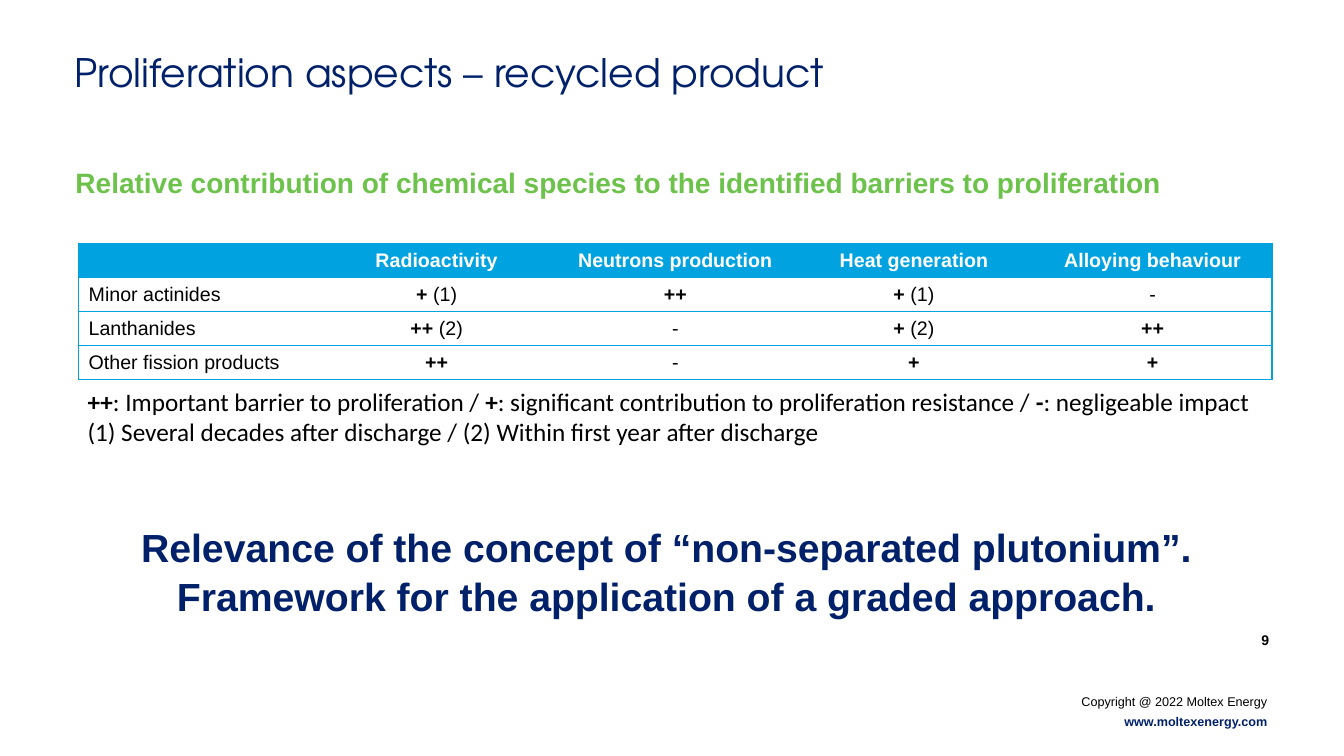
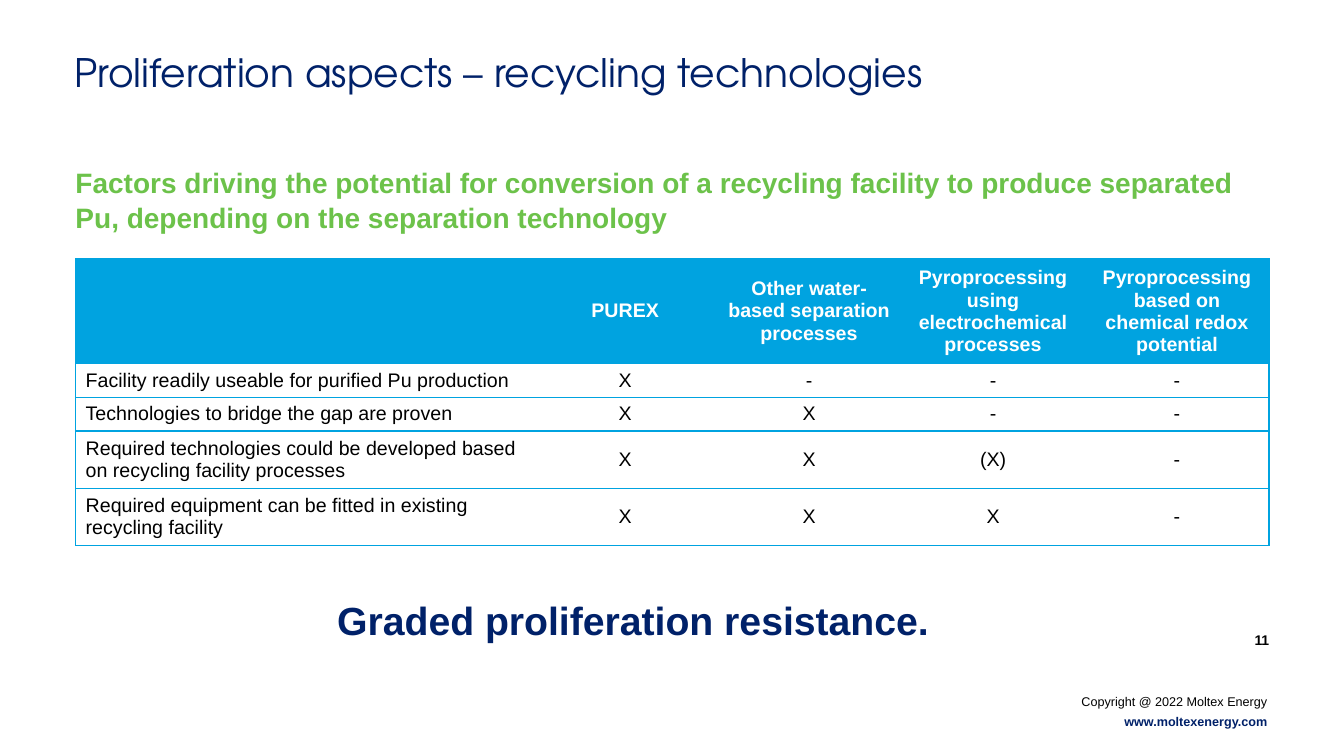
"""Two slides on proliferation aspects of recycled nuclear fuel."""
from dataclasses import dataclass
from typing import NamedTuple

from lxml import etree
from pptx import Presentation, util as u
from pptx.dml.color import RGBColor
from pptx.enum import text as t
from pptx.oxml import ns

COLOURS = {"navy": "002169", "green": "6CC24A", "sky": "00A3E0",
           "black": "000000", "white": "FFFFFF"}
WIDTH, HEIGHT = u.Inches(13.333), u.Inches(7.5)
COLUMNS, ROWS = 160, 90
NO_GRID = "{2D5ABB26-0587-4C30-8999-92F81FD0307C}"
LEFT, CENTRE, RIGHT = t.PP_ALIGN.LEFT, t.PP_ALIGN.CENTER, t.PP_ALIGN.RIGHT


class Box(NamedTuple):
    """Place on the slide in grid columns and rows."""
    left: float
    top: float
    width: float
    height: float


@dataclass(frozen=True)
class Style:
    """Look of a paragraph."""
    size: float
    colour: str = "black"
    bold: bool = False
    align: t.PP_ALIGN = LEFT
    face: str = "Arial"
    leading: float | u.Pt | None = None


@dataclass(frozen=True)
class Matrix:
    """Comparison table whose first row is the header."""
    left: float
    top: float
    columns: list[float]
    rows: list[float]
    cells: list[list[str]]


@dataclass(frozen=True)
class Page:
    """Content of one slide."""
    number: int
    title: str
    subtitle: str
    subtitle_box: Box
    matrix: Matrix
    conclusion: str
    conclusion_box: Box
    legend: tuple[str, ...] = ()


TITLE = Style(28, "navy", face="TeX Gyre Adventor")
SUBTITLE = Style(20, "green", True, leading=1.06)
CONCLUSION = Style(28, "navy", True, CENTRE, leading=1.06)
LEGEND = Style(18, face="Calibri")
NUMBER = Style(10, bold=True, align=RIGHT)
COPYRIGHT = Style(9, align=RIGHT, leading=u.Pt(14))
WEBSITE = Style(9, "navy", True, RIGHT, leading=u.Pt(14))
HEADER = Style(14, "white", True, CENTRE)
FACTOR = Style(14)
RATING = Style(14, align=CENTRE)

TITLE_BOX = Box(7.68, 5.16, 111.12, 6.84)
NUMBER_BOX = Box(116.28, 74.64, 36, 4.8)
FOOTER_BOX = Box(126.48, 81.48, 25.56, 5.64)
LEGEND_BOX = Box(9.24, 45.36, 143.28, 12.12)
TABLE_WIDTH = 142.08
FACTOR_WIDTH = 54.48

PAGES = [
    Page(
        9, "Proliferation aspects – recycled product",
        "Relative contribution of chemical species to the identified barriers to proliferation",
        Box(7.8, 18.84, 143.16, 5.28),
        Matrix(9.36, 29.04, [TABLE_WIDTH / 5] * 5, [4.03] * 4, [
            ["", "Radioactivity", "Neutrons production", "Heat generation", "Alloying behaviour"],
            ["Minor actinides", "*+* (1)", "*++*", "*+* (1)", "-"],
            ["Lanthanides", "*++* (2)", "-", "*+* (2)", "*++*"],
            ["Other fission products", "*++*", "-", "*+*", "*+*"],
        ]),
        "Relevance of the concept of “non-separated plutonium”. "
        "Framework for the application of a graded approach.",
        Box(8.28, 61.32, TABLE_WIDTH, 12.48),
        ("*++*: Important barrier to proliferation / *+*: significant contribution to "
         "proliferation resistance / *-*: negligeable impact",
         "(1) Several decades after discharge / (2) Within first year after discharge"),
    ),
    Page(
        11, "Proliferation aspects – recycling technologies",
        "Factors driving the potential for conversion of a recycling facility to produce "
        "separated Pu, depending on the separation technology",
        Box(7.8, 18.84, 141.24, 9.24),
        Matrix(9, 30.84, [FACTOR_WIDTH] + [(TABLE_WIDTH - FACTOR_WIDTH) / 4] * 4,
               [12.35, 4.03, 4.03, 6.84, 6.84], [
            ["", "PUREX", "Other water-based separation processes",
             "Pyroprocessing using electrochemical processes",
             "Pyroprocessing based on chemical redox potential"],
            ["Facility readily useable for purified Pu production", "X", "-", "-", "-"],
            ["Technologies to bridge the gap are proven", "X", "X", "-", "-"],
            ["Required technologies could be developed based on recycling facility processes",
             "X", "X", "(X)", "-"],
            ["Required equipment can be fitted in existing recycling facility",
             "X", "X", "X", "-"],
        ]),
        "Graded proliferation resistance.",
        Box(4.32, 70.08, TABLE_WIDTH, 6.84),
    ),
]


def across(columns: float) -> int:
    """Turn grid columns into a length."""
    return round(WIDTH * columns / COLUMNS)


def down(rows: float) -> int:
    """Turn grid rows into a length."""
    return round(HEIGHT * rows / ROWS)


def place(box: Box) -> tuple[int, int, int, int]:
    """Turn a grid box into slide lengths."""
    return across(box.left), down(box.top), across(box.width), down(box.height)


def colour(name: str) -> RGBColor:
    """Look up a named colour."""
    return RGBColor.from_string(COLOURS[name])


def write(paragraph, wording: str, style: Style) -> None:
    """Write a paragraph, with bold parts between asterisks."""
    paragraph.alignment = style.align
    if style.leading:
        paragraph.line_spacing = style.leading
    font = paragraph.font
    font.size, font.name, font.bold = u.Pt(style.size), style.face, style.bold
    font.color.rgb = colour(style.colour)
    for index, part in enumerate(wording.split("*")):
        if part:
            run = paragraph.add_run()
            run.text = part
            if index % 2:
                run.font.bold = True
    if not wording:
        paragraph._p.get_or_add_endParaRPr().set("sz", str(style.size * 100))


def add_text(slide, box: Box, *lines: tuple[str, Style]) -> None:
    """Add a wrapping text box with one paragraph per line."""
    frame = slide.shapes.add_textbox(*place(box)).text_frame
    frame.word_wrap = True
    for index, (wording, style) in enumerate(lines):
        paragraph = frame.add_paragraph() if index else frame.paragraphs[0]
        write(paragraph, wording, style)


def rule(cell, sides: str) -> None:
    """Draw one-point borders on the given sides of a cell."""
    properties = cell._tc.get_or_add_tcPr()
    for side in sides:
        line = etree.SubElement(properties, ns.qn(f"a:ln{side}"), w=str(u.Pt(1)))
        fill = etree.SubElement(line, ns.qn("a:solidFill"))
        etree.SubElement(fill, ns.qn("a:srgbClr"), val=COLOURS["sky"])


def add_matrix(slide, matrix: Matrix) -> None:
    """Add a table with a filled header and horizontal rules."""
    box = Box(matrix.left, matrix.top, sum(matrix.columns), sum(matrix.rows))
    table = slide.shapes.add_table(len(matrix.rows), len(matrix.columns), *place(box)).table
    table.first_row = table.horz_banding = False
    table._tbl.tblPr.find(ns.qn("a:tableStyleId")).text = NO_GRID
    for column, width in zip(table.columns, matrix.columns):
        column.width = across(width)
    for row, height in zip(table.rows, matrix.rows):
        row.height = down(height)
    last = len(matrix.columns) - 1
    for r, wordings in enumerate(matrix.cells):
        for c, wording in enumerate(wordings):
            cell = table.cell(r, c)
            cell.vertical_anchor = t.MSO_ANCHOR.MIDDLE
            rule(cell, ("L" if c == 0 else "") + ("R" if c == last else "") + "TB")
            if r == 0:
                cell.fill.solid()
                cell.fill.fore_color.rgb = colour("sky")
            else:
                cell.fill.background()
            style = HEADER if r == 0 else RATING if c else FACTOR
            write(cell.text_frame.paragraphs[0], wording, style)


def add_page(deck, page: Page) -> None:
    """Add one slide with its shared footer, number and title."""
    slide = deck.slides.add_slide(deck.slide_layouts[6])
    add_text(slide, FOOTER_BOX, ("Copyright @ 2022 Moltex Energy", COPYRIGHT),
             ("www.moltexenergy.com", WEBSITE))
    add_text(slide, NUMBER_BOX, (str(page.number), NUMBER))
    add_text(slide, TITLE_BOX, (page.title, TITLE))
    add_text(slide, page.subtitle_box, (page.subtitle, SUBTITLE))
    add_matrix(slide, page.matrix)
    add_text(slide, page.conclusion_box, (page.conclusion, CONCLUSION))
    if page.legend:
        add_text(slide, LEGEND_BOX, *((line, LEGEND) for line in page.legend))


def main() -> None:
    """Build and save the presentation."""
    deck = Presentation()
    deck.slide_width, deck.slide_height = WIDTH, HEIGHT
    for page in PAGES:
        add_page(deck, page)
    deck.save("out.pptx")


if __name__ == "__main__":
    main()
